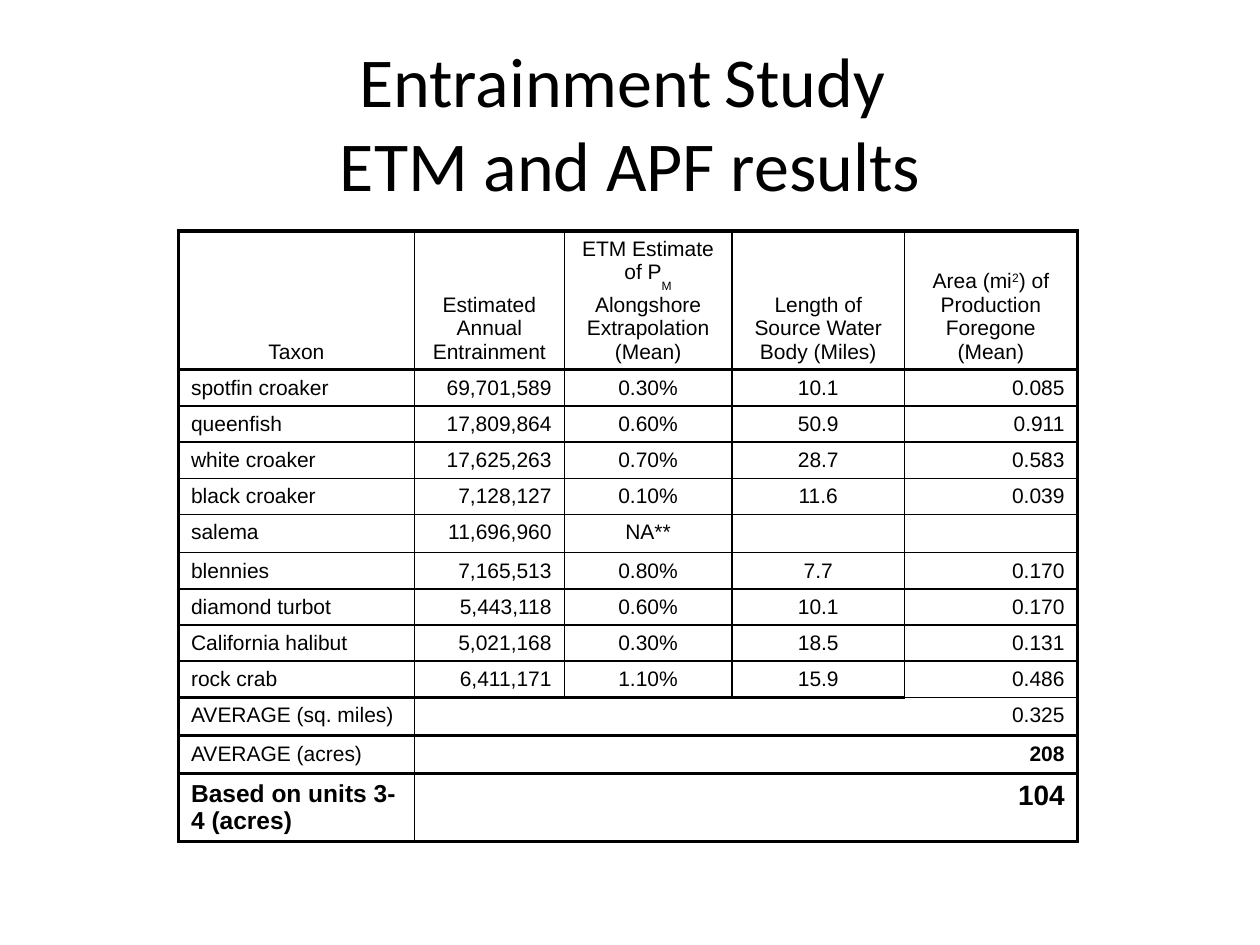
from lxml import etree
from pptx import Presentation, util as u
from pptx.dml.color import RGBColor
from pptx.enum import text as t
from pptx.oxml import ns

LEFT, CENTER, RIGHT = t.PP_ALIGN.LEFT, t.PP_ALIGN.CENTER, t.PP_ALIGN.RIGHT
ALIGNMENTS = [LEFT, RIGHT, CENTER, CENTER, CENTER, RIGHT]
COLUMN_WIDTHS = [134.9, 85.6, 78.6, 16.8, 98.7, 98.6]
HEADER_HEIGHT, FIRST_HEIGHT, ROW_HEIGHT = 70.5, 14.4, 20.5
THICK, THIN, NONE = 2, 1, 0
HEADERS = [
    ["Taxon"],
    ["Estimated Annual Entrainment"],
    ["ETM Estimate of P", ("M ", -50), "Alongshore Extrapolation (Mean)"],
    None,
    ["Length of Source Water Body (Miles)"],
    ["Area (mi", ("2", 30), ") of Production Foregone (Mean)"],
]
TAXA = [
    ("spotfin croaker", "69,701,589", "0.30%", "10.1", "0.085"),
    ("queenfish", "17,809,864", "0.60%", "50.9", "0.911"),
    ("white croaker", "17,625,263", "0.70%", "28.7", "0.583"),
    ("black croaker", "7,128,127", "0.10%", "11.6", "0.039"),
    ("salema", "11,696,960", "NA**", "", ""),
    ("blennies", "7,165,513", "0.80%", "7.7", "0.170"),
    ("diamond turbot", "5,443,118", "0.60%", "10.1", "0.170"),
    ("California halibut", "5,021,168", "0.30%", "18.5", "0.131"),
    ("rock crab", "6,411,171", "1.10%", "15.9", "0.486"),
]
SUMMARIES = [
    ("AVERAGE (sq. miles)", {}, "0.325", {}),
    ("AVERAGE (acres)", {}, "208", {"bold": True}),
    ("Based on units 3-4 (acres)", {"size": 14, "bold": True},
     "104", {"size": 16, "bold": True}),
]
FIRST_SUMMARY = len(TAXA) + 1
ROW_COUNT = FIRST_SUMMARY + len(SUMMARIES)


def color(value):
    """Return the colour for a hex string."""
    return RGBColor.from_string(value)


def add_text(paragraph, content, *, size=12, font="Arial", bold=False, baseline=0):
    """Add one formatted run to a paragraph."""
    run = paragraph.add_run()
    run.text = content
    run.font.size = u.Pt(size)
    run.font.name = font
    run.font.bold = bold
    run.font.color.rgb = color("000000")
    if baseline:
        run.font._element.set("baseline", str(baseline * 1000))


def set_border(cell, side, width):
    """Draw one side of a cell, or hide it when the width is zero."""
    properties = cell._tc.get_or_add_tcPr()
    line = etree.SubElement(properties, ns.qn(f"a:ln{side}"), w=str(u.Pt(width)))
    if not width:
        etree.SubElement(line, ns.qn("a:noFill"))
        return
    fill = etree.SubElement(line, ns.qn("a:solidFill"))
    etree.SubElement(fill, ns.qn("a:srgbClr"), val="000000")


def vertical_rule(row, boundary):
    """Return the width of the rule at a column boundary."""
    if boundary in (0, len(COLUMN_WIDTHS)):
        return THICK
    if boundary == 1:
        return THIN
    return NONE if row >= FIRST_SUMMARY or boundary == 3 else THIN


def horizontal_rule(boundary, column):
    """Return the width of the rule at a row boundary."""
    if boundary == FIRST_SUMMARY and column == len(COLUMN_WIDTHS) - 1:
        return THIN
    return THICK if boundary < 2 or boundary >= FIRST_SUMMARY else THIN


def style_cell(cell, row, column):
    """Set the borders and fill of a cell."""
    span = cell.span_width if cell.is_merge_origin else 1
    set_border(cell, "L", vertical_rule(row, column))
    set_border(cell, "R", vertical_rule(row, column + span))
    set_border(cell, "T", horizontal_rule(row, column))
    set_border(cell, "B", horizontal_rule(row + 1, column))
    is_summary_gap = row >= FIRST_SUMMARY and 0 < column < len(COLUMN_WIDTHS) - 1
    if row == 0 or is_summary_gap:
        cell.fill.background()
    else:
        cell.fill.solid()
        cell.fill.fore_color.rgb = color("FFFFFF")


def fill_cell(cell, parts, alignment, **text_format):
    """Write plain or (text, baseline) parts into a cell."""
    paragraph = cell.text_frame.paragraphs[0]
    paragraph.alignment = alignment
    for part in parts:
        content, baseline = part if isinstance(part, tuple) else (part, 0)
        add_text(paragraph, content, baseline=baseline, **text_format)


def add_results_table(slide):
    """Add the table of entrainment results."""
    frame = slide.shapes.add_table(
        ROW_COUNT, len(COLUMN_WIDTHS), u.Pt(102), u.Pt(132),
        u.Pt(sum(COLUMN_WIDTHS)), u.Pt(ROW_HEIGHT * ROW_COUNT))
    table = frame.table
    table.first_row = table.horz_banding = False
    for column, width in zip(table.columns, COLUMN_WIDTHS):
        column.width = u.Pt(width)
    heights = [HEADER_HEIGHT, FIRST_HEIGHT] + [ROW_HEIGHT] * (ROW_COUNT - 2)
    for index, height in enumerate(heights):
        table.rows[index].height = u.Pt(height)
        start = 1 if index > FIRST_SUMMARY else 2
        table.cell(index, start).merge(table.cell(index, start + 1))
        for column in range(len(COLUMN_WIDTHS)):
            cell = table.cell(index, column)
            style_cell(cell, index, column)
            paragraph = cell.text_frame.paragraphs[0]
            paragraph._p.get_or_add_endParaRPr().set("sz", "1200")
    for column, parts in enumerate(HEADERS):
        if parts:
            cell = table.cell(0, column)
            cell.vertical_anchor = t.MSO_ANCHOR.BOTTOM
            fill_cell(cell, parts, CENTER)
    for row, values in enumerate(TAXA, 1):
        for column, value in zip((0, 1, 2, 4, 5), values):
            if value:
                fill_cell(table.cell(row, column), [value], ALIGNMENTS[column])
    for row, summary in enumerate(SUMMARIES, FIRST_SUMMARY):
        label, label_format, value, value_format = summary
        fill_cell(table.cell(row, 0), [label], LEFT, **label_format)
        fill_cell(table.cell(row, 5), [value], RIGHT, **value_format)


def add_title(slide):
    """Place and write the slide title."""
    title = slide.shapes.title
    title.left, title.top = u.Pt(0), u.Pt(18)
    title.width, title.height = u.Pt(720), u.Pt(104.4)
    title.text_frame.vertical_anchor = t.MSO_ANCHOR.TOP
    title.text_frame.auto_size = t.MSO_AUTO_SIZE.NONE
    paragraph = title.text_frame.paragraphs[0]
    paragraph.alignment = CENTER
    paragraph.space_before = u.Pt(8)
    add_text(paragraph, "Entrainment", size=40, font="Calibri")
    add_text(paragraph, " ", size=28, font="Times New Roman")
    add_text(paragraph, "Study ", size=40, font="Calibri")
    paragraph.add_line_break()
    add_text(paragraph, "ETM and APF results", size=40, font="Calibri")


def main():
    """Build and save the presentation."""
    presentation = Presentation()
    presentation.slide_width, presentation.slide_height = u.Pt(720), u.Pt(540)
    slide = presentation.slides.add_slide(presentation.slide_layouts[5])
    add_results_table(slide)
    add_title(slide)
    presentation.save("out.pptx")


if __name__ == "__main__":
    main()
